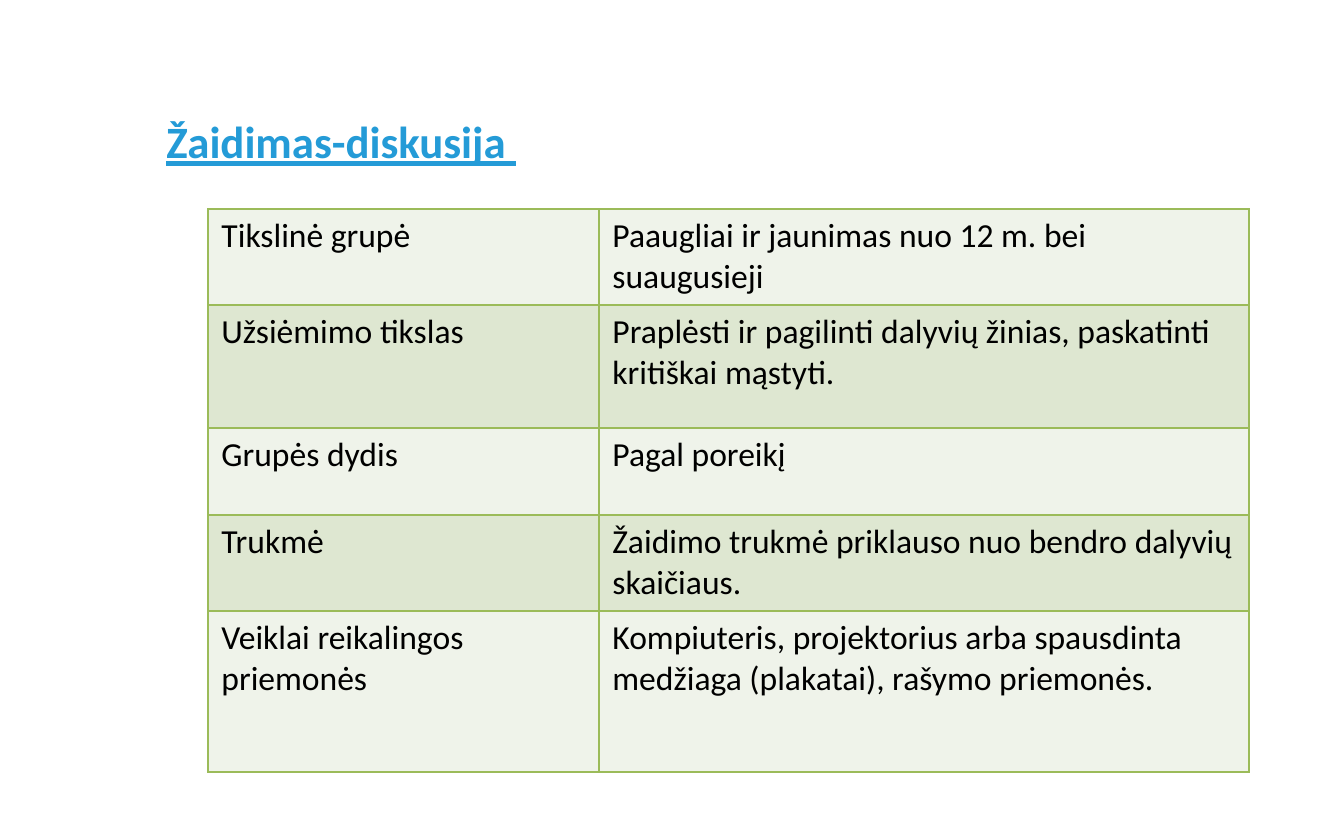
from dataclasses import dataclass

from lxml import etree
from pptx import Presentation
from pptx.dml.color import RGBColor
from pptx.enum.text import MSO_ANCHOR
from pptx.oxml.ns import qn
from pptx.util import Emu, Pt

MIDDLE = MSO_ANCHOR.MIDDLE
EMU_PER_PX = 914400 / 134.4
FONT = "Calibri"
COLORS = {
    "title": "249BD7",
    "text": "000000",
    "border": "9BBB59",
    "light": "EFF3EA",
    "dark": "DEE7D1",
}
COLUMN_WIDTHS = (391, 650)


@dataclass(frozen=True)
class ActivityRow:
    label: str
    detail: str
    height: int


ROWS = (
    ActivityRow("Tikslinė grupė", "Paaugliai ir jaunimas nuo 12 m. bei suaugusieji", 96),
    ActivityRow(
        "Užsiėmimo tikslas",
        "Praplėsti ir pagilinti dalyvių žinias, paskatinti kritiškai mąstyti.",
        123,
    ),
    ActivityRow("Grupės dydis", "Pagal poreikį", 87),
    ActivityRow("Trukmė", "Žaidimo trukmė priklauso nuo bendro dalyvių skaičiaus.", 96),
    ActivityRow(
        "Veiklai reikalingos priemonės",
        "Kompiuteris, projektorius arba spausdinta medžiaga (plakatai), rašymo priemonės.",
        161,
    ),
)


def px(value: int) -> Emu:
    """Turn pixels into EMU."""
    return Emu(round(value * EMU_PER_PX))


def write(tf, text: str, *, size: int = 18, color: str = "text",
          bold: bool = False, underline: bool = False) -> None:
    """Put one formatted run into a text frame."""
    tf.word_wrap = True
    r = tf.paragraphs[0].add_run()
    r.text = text
    r.font.name = FONT
    r.font.size = Pt(size)
    r.font.bold = bold
    r.font.underline = underline
    r.font.color.rgb = RGBColor.from_string(COLORS[color])


def set_borders(cell) -> None:
    """Draw a one-point line on all four sides of a cell."""
    tc_pr = cell._tc.get_or_add_tcPr()
    for i, side in enumerate(("a:lnL", "a:lnR", "a:lnT", "a:lnB")):
        ln = etree.Element(qn(side), w=str(Pt(1)))
        fill = etree.SubElement(ln, qn("a:solidFill"))
        etree.SubElement(fill, qn("a:srgbClr"), val=COLORS["border"])
        tc_pr.insert(i, ln)


def add_title(s, text: str) -> None:
    """Add the underlined heading."""
    sp = s.shapes.add_textbox(px(153), px(71), px(1114), px(140))
    tf = sp.text_frame
    write(tf, text, size=24, color="title", bold=True, underline=True)
    tf.vertical_anchor = MIDDLE


def add_activity_table(s, rows: tuple[ActivityRow, ...]) -> None:
    """Add the two-column table with alternating row fills."""
    height = sum(row.height for row in rows)
    table = s.shapes.add_table(
        len(rows), len(COLUMN_WIDTHS), px(208), px(209), px(sum(COLUMN_WIDTHS)), px(height)
    ).table
    table.first_row = False
    for column, width in zip(table.columns, COLUMN_WIDTHS):
        column.width = px(width)
    for i, row in enumerate(rows):
        table.rows[i].height = px(row.height)
        shade = COLORS["dark" if i % 2 else "light"]
        for cell, text in zip(table.rows[i].cells, (row.label, row.detail)):
            cell.fill.solid()
            cell.fill.fore_color.rgb = RGBColor.from_string(shade)
            set_borders(cell)
            write(cell.text_frame, text)


def main() -> None:
    """Build and save the slide."""
    prs = Presentation()
    prs.slide_width, prs.slide_height = px(1344), px(840)
    s = prs.slides.add_slide(prs.slide_layouts[6])
    add_title(s, "Žaidimas-diskusija ")
    add_activity_table(s, ROWS)
    prs.save("out.pptx")


if __name__ == "__main__":
    main()
